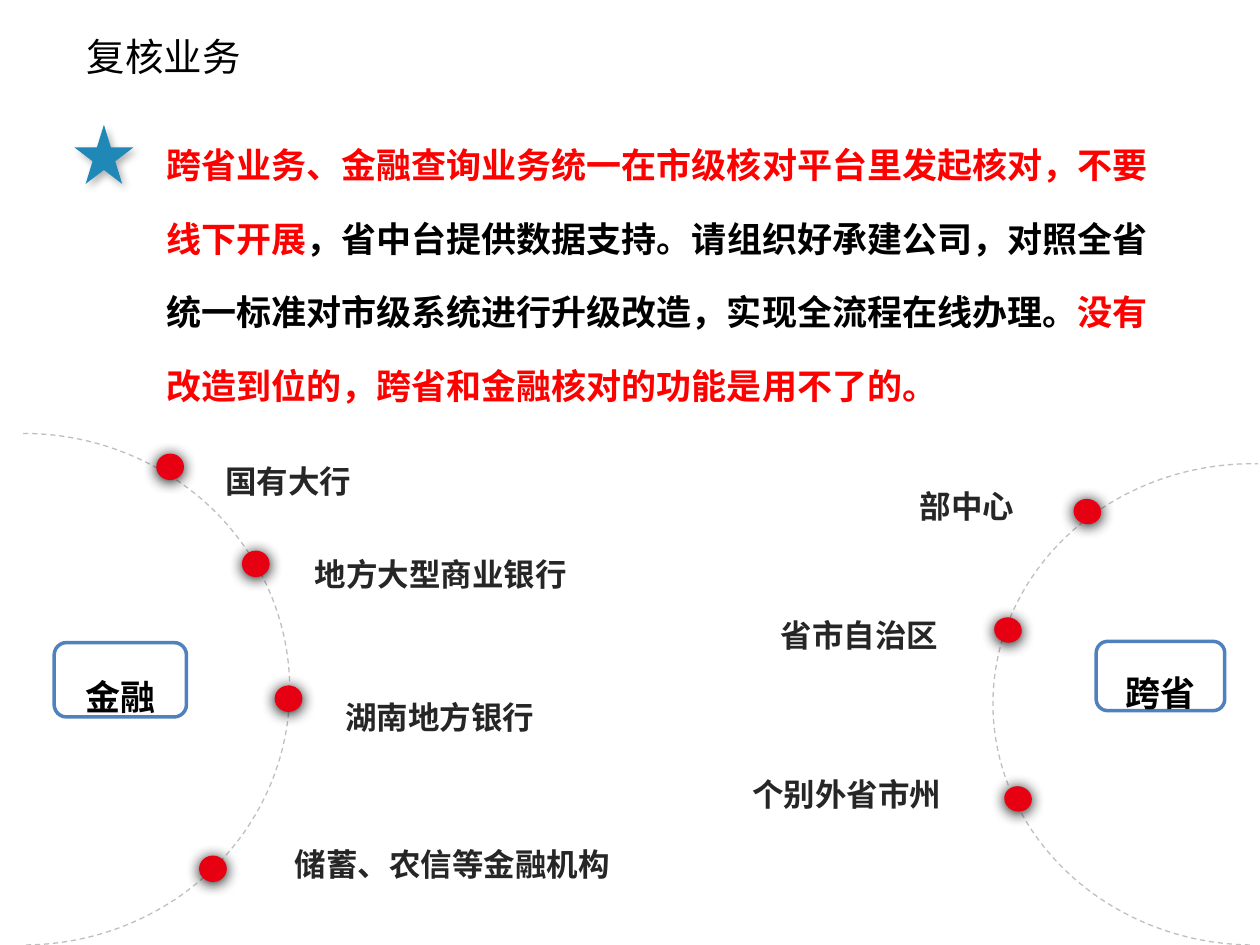
from lxml import etree
from pptx import Presentation
from pptx.dml.color import RGBColor
from pptx.enum.dml import MSO_LINE
from pptx.enum.shapes import MSO_SHAPE
from pptx.enum.text import MSO_ANCHOR, MSO_AUTO_SIZE, PP_ALIGN
from pptx.oxml.ns import qn
from pptx.util import Inches, Pt

COLORS = {
    "black": "000000", "red": "FF0000", "label": "262626", "star": "1F88B7",
    "white": "FFFFFF", "dash": "BFBFBF", "dot": "E60012", "frame": "4F81BD",
}
CJK_FONT = "Noto Sans CJK SC"


def add_run(paragraph, text, size, color, bold=True, latin=CJK_FONT):
    run = paragraph.add_run()
    run.text = text
    run.font.size = Pt(size)
    run.font.bold = bold
    run.font.name = latin
    run.font.color.rgb = RGBColor.from_string(COLORS[color])
    east_asian = etree.SubElement(run.font._element, qn("a:ea"))
    east_asian.set("typeface", CJK_FONT)


def add_shadow(shape, alpha, blur, distance, angle):
    """Blur and distance in points, alpha in percent, angle in degrees."""
    shape.shadow.inherit = False
    effects = shape._element.spPr.find(qn("a:effectLst"))
    shadow = etree.SubElement(
        effects, qn("a:outerShdw"), blurRad=str(Pt(blur)), dist=str(Pt(distance)),
        dir=str(angle * 60000), algn="ctr", rotWithShape="0")
    color = etree.SubElement(shadow, qn("a:srgbClr"), val=COLORS["black"])
    etree.SubElement(color, qn("a:alpha"), val=str(alpha * 1000))


presentation = Presentation()
presentation.slide_width = Inches(10)
presentation.slide_height = Inches(7.5)
slide = presentation.slides.add_slide(presentation.slide_layouts[6])
shapes = slide.shapes

# Title
title = shapes.add_textbox(Inches(0.59), Inches(0.21), Inches(7.93), Inches(0.47))
title.text_frame.word_wrap = True
title.text_frame.vertical_anchor = MSO_ANCHOR.MIDDLE
add_run(title.text_frame.paragraphs[0], "复核业务", 22, "black", bold=False, latin="Calibri")

# Starred requirement
requirement = shapes.add_textbox(Inches(1.22), Inches(0.84), Inches(8.27), Inches(2.52))
requirement.text_frame.word_wrap = True
requirement.text_frame.margin_right = Inches(0.2)
paragraph = requirement.text_frame.paragraphs[0]
paragraph.line_spacing = Pt(42)
for text, color in [
    ("跨省业务、金融查询业务统一在市级核对平台里发起核对，不要线下开展", "red"),
    ("，省中台提供数据支持。请组织好承建公司，对照全省统一标准对市级系统进行升级改造，实现全流程在线办理。", "black"),
    ("没有改造到位的，跨省和金融核对的功能是用不了的。", "red"),
]:
    add_run(paragraph, text, 20, color)

star = shapes.add_shape(MSO_SHAPE.STAR_5_POINT, Inches(0.59), Inches(0.99), Inches(0.47), Inches(0.47))
star.fill.solid()
star.fill.fore_color.rgb = RGBColor.from_string(COLORS["star"])
star.line.fill.background()
add_shadow(star, 30, 4.5, 2.6, 53)

# Each half circle: arc, dots, labels (left, top, width, height, spacing) and framed name
half_circles = [
    {
        "arc": (-1.93, 3.44, 4.23, 4.06), "arc_rotation": 0,
        "dots": [(1.24, 3.6), (1.92, 4.37), (2.18, 5.44), (1.58, 6.79)],
        "dot_height": 0.21, "dot_rotation": 0,
        "labels": [
            ("国有大行", 1.69, 3.47, 7.21, 0.56, 1.5),
            ("地方大型商业银行", 2.4, 4.21, 7.21, 0.56, 1.5),
            ("湖南地方银行", 2.64, 5.34, 7.38, 0.57, 1.5),
            ("储蓄、农信等金融机构", 2.24, 6.66, 6.27, 0.4, 1.0),
        ],
        "name": "金融", "frame": (0.43, 5.1, 1.05, 0.59),
    },
    {
        "arc": (7.88, 3.68, 4.14, 3.82), "arc_rotation": 180.9,
        "dots": [(8.52, 3.96), (7.89, 4.9), (7.97, 6.24)],
        "dot_height": 0.2, "dot_rotation": 193.2,
        "labels": [
            ("部中心", 7.2, 3.67, 1.1, 0.56, 1.5),
            ("省市自治区", 6.1, 4.69, 1.57, 0.56, 1.5),
            ("个别外省市州", 5.87, 5.95, 1.89, 0.56, 1.5),
        ],
        "name": "跨省", "frame": (8.7, 5.09, 1.02, 0.55),
    },
]

for half in half_circles:
    arc = shapes.add_shape(MSO_SHAPE.ARC, *map(Inches, half["arc"]))
    arc.adjustments[0] = 162
    arc.adjustments[1] = 54.04
    arc.rotation = half["arc_rotation"]
    arc.shadow.inherit = False
    arc.fill.solid()
    arc.fill.fore_color.rgb = RGBColor.from_string(COLORS["white"])
    arc.line.color.rgb = RGBColor.from_string(COLORS["dash"])
    arc.line.width = Pt(0.75)
    arc.line.dash_style = MSO_LINE.DASH

    for left, top in half["dots"]:
        dot = shapes.add_shape(
            MSO_SHAPE.OVAL, Inches(left), Inches(top), Inches(0.22), Inches(half["dot_height"]))
        dot.rotation = half["dot_rotation"]
        dot.fill.solid()
        dot.fill.fore_color.rgb = RGBColor.from_string(COLORS["dot"])
        dot.line.fill.background()
        add_shadow(dot, 100, 8.5, 1, 90)

    for text, left, top, width, height, spacing in half["labels"]:
        label = shapes.add_textbox(Inches(left), Inches(top), Inches(width), Inches(height))
        label.text_frame.word_wrap = True
        label.text_frame.auto_size = MSO_AUTO_SIZE.SHAPE_TO_FIT_TEXT
        paragraph = label.text_frame.paragraphs[0]
        paragraph.line_spacing = spacing
        add_run(paragraph, text, 18, "label")

    frame = shapes.add_shape(MSO_SHAPE.ROUNDED_RECTANGLE, *map(Inches, half["frame"]))
    frame.shadow.inherit = False
    frame.fill.background()
    frame.line.color.rgb = RGBColor.from_string(COLORS["frame"])
    frame.line.width = Pt(2)
    frame.text_frame.vertical_anchor = MSO_ANCHOR.MIDDLE
    paragraph = frame.text_frame.paragraphs[0]
    paragraph.alignment = PP_ALIGN.CENTER
    paragraph.line_spacing = Pt(43)
    add_run(paragraph, half["name"], 20, "black", latin="Times New Roman")

presentation.save("out.pptx")
